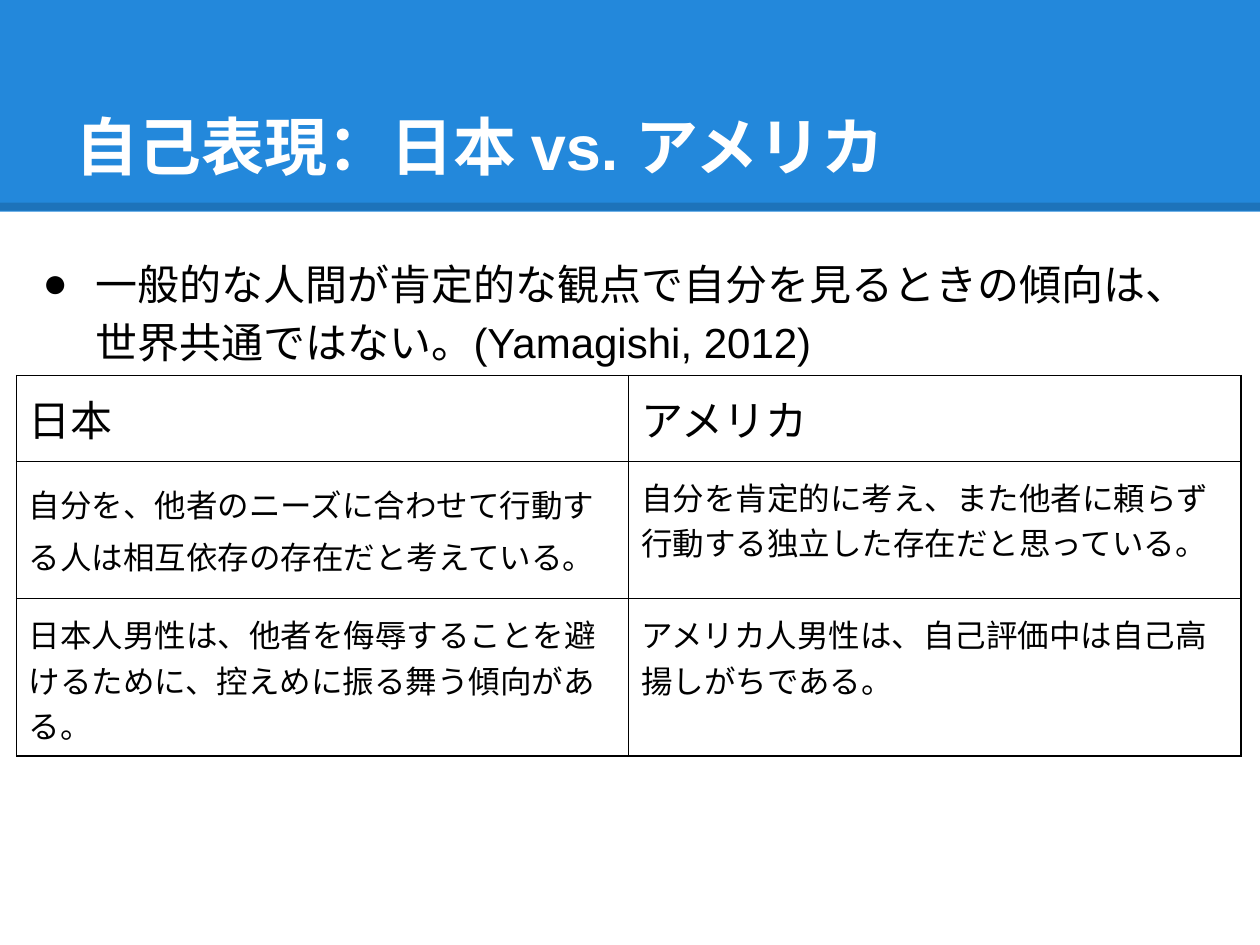
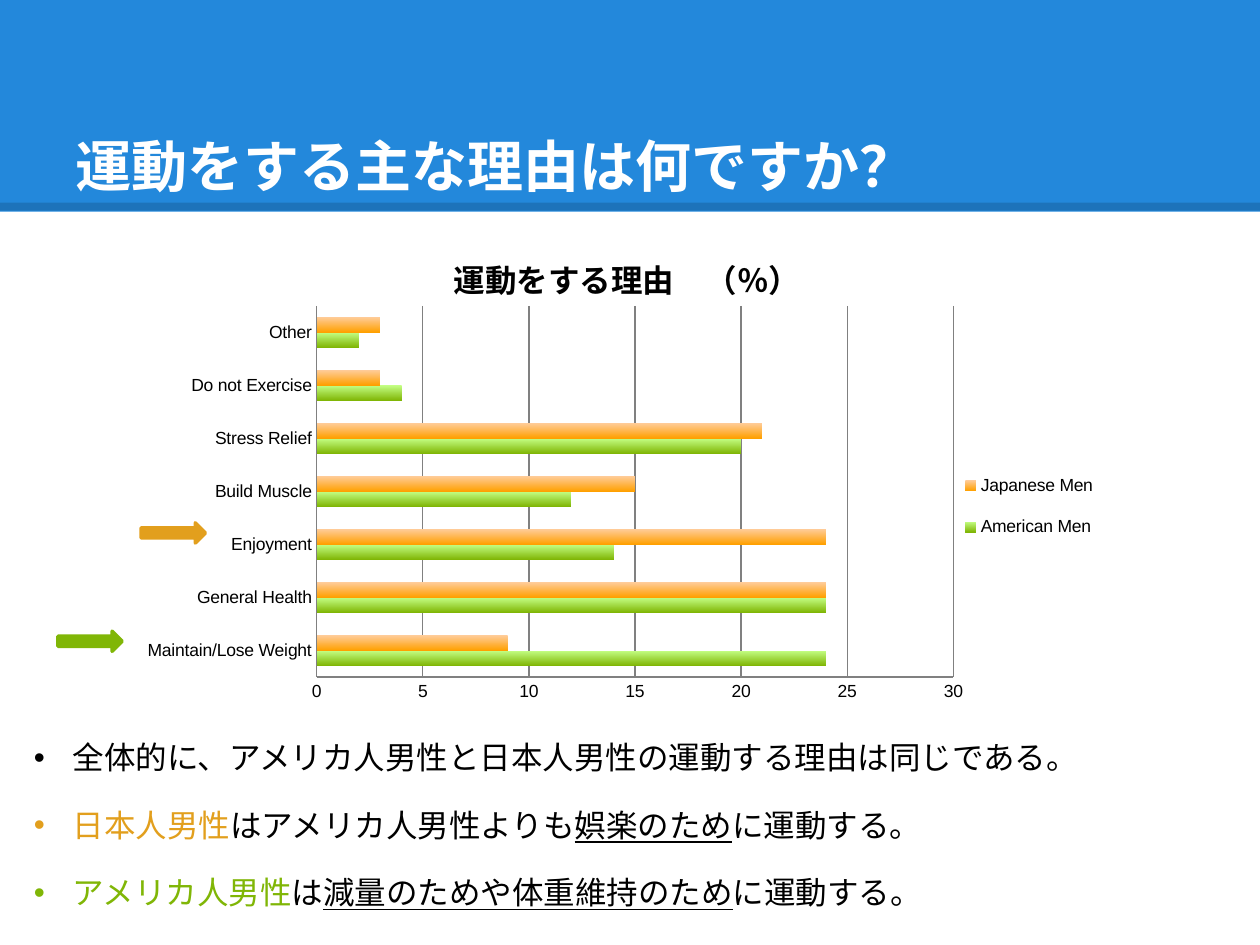
"""Two slides comparing how men in Japan and America see themselves and exercise."""
from dataclasses import dataclass

from lxml import etree
from pptx import Presentation
from pptx.chart.data import CategoryChartData
from pptx.dml.color import RGBColor
from pptx.enum.chart import XL_CHART_TYPE, XL_LEGEND_POSITION, XL_TICK_MARK
from pptx.enum.shapes import MSO_CONNECTOR, MSO_SHAPE
from pptx.enum.text import MSO_ANCHOR, MSO_AUTO_SIZE, PP_ALIGN
from pptx.oxml.ns import qn
from pptx.util import Inches, Pt

BAR = XL_CHART_TYPE.BAR_CLUSTERED
RIGHT = XL_LEGEND_POSITION.RIGHT
NO_TICK = XL_TICK_MARK.NONE
STRAIGHT = MSO_CONNECTOR.STRAIGHT
RECT, ARROW = MSO_SHAPE.RECTANGLE, MSO_SHAPE.RIGHT_ARROW
TOP, BOTTOM = MSO_ANCHOR.TOP, MSO_ANCHOR.BOTTOM
NO_FIT = MSO_AUTO_SIZE.NONE
LEFT = PP_ALIGN.LEFT

FACE = "Arial"
BLUE, WHITE, BLACK, GRAY = "2388DB", "FFFFFF", "000000", "808080"
JAPAN, USA = "E29F1D", "80B606"


@dataclass
class Phrase:
    """A stretch of text with its own colour or underline."""
    text: str
    tone: str = BLACK
    under: bool = False


@dataclass
class Point:
    """A bulleted line made of phrases."""
    words: list[Phrase]


@dataclass
class Group:
    """One chart series with the ends of its gradient."""
    name: str
    vals: tuple[int, ...]
    light: str
    dark: str


@dataclass
class Mark:
    """An arrow that points at a chart category."""
    left: float
    top: float
    tone: str


ROWS = [
    ("日本", "アメリカ"),
    ("自分を、他者のニーズに合わせて行動する人は相互依存の存在だと考えている。",
     "自分を肯定的に考え、また他者に頼らず行動する独立した存在だと思っている。"),
    ("日本人男性は、他者を侮辱することを避けるために、控えめに振る舞う傾向がある。",
     "アメリカ人男性は、自己評価中は自己高揚しがちである。"),
]
TALL = (0.68, 1.09, 1.25)
CATS = ["Maintain/Lose Weight", "General Health", "Enjoyment", "Build Muscle",
        "Stress Relief", "Do not Exercise", "Other"]
GROUPS = [
    Group("American Men", (24, 24, 14, 12, 20, 4, 2), "C4FF85", USA),
    Group("Japanese Men", (9, 24, 24, 15, 21, 3, 3), "FFCC99", "FFA000"),
]
MARKS = [Mark(1.12, 4.15, JAPAN), Mark(0.46, 5.01, USA)]
POINTS = [
    Point([Phrase("全体的に、アメリカ人男性と日本人男性の運動する理由は同じである。")]),
    Point([Phrase("日本人男性", JAPAN), Phrase("はアメリカ人男性よりも"),
           Phrase("娯楽のため", under=True), Phrase("に運動する。")]),
    Point([Phrase("アメリカ人男性", USA), Phrase("は"),
           Phrase("減量のためや体重維持のため", under=True),
           Phrase("に運動する。")]),
]


def color(tone: str) -> RGBColor:
    """Turn a hex string into a colour."""
    return RGBColor.from_string(tone)


def style(font, size: float, tone: str = BLACK, bold: bool = False) -> None:
    """Set face, size, colour and weight of a font."""
    font.name, font.size, font.bold = FACE, Pt(size), bold
    font.color.rgb = color(tone)


def bullet(para, sign: str, tone: str, indent: float, hang: float) -> None:
    """Give a paragraph a coloured bullet with a hanging indent."""
    props = para._p.get_or_add_pPr()
    props.set("marL", str(Inches(indent)))
    props.set("indent", str(-Inches(hang)))
    fill = etree.SubElement(props, qn("a:buClr"))
    etree.SubElement(fill, qn("a:srgbClr"), val=tone)
    etree.SubElement(props, qn("a:buFont"), typeface=FACE)
    etree.SubElement(props, qn("a:buChar"), char=sign)


def add_box(slide, left: float, top: float, width: float, height: float):
    """Add a wrapping text box and return its frame."""
    box = slide.shapes.add_textbox(*map(Inches, (left, top, width, height)))
    box.text_frame.word_wrap = True
    return box.text_frame


def add_form(slide, kind, spot: tuple, tone: str):
    """Add a flat filled shape without a line."""
    form = slide.shapes.add_shape(kind, *map(Inches, spot))
    form.shadow.inherit = False
    form.fill.solid()
    form.fill.fore_color.rgb = color(tone)
    form.line.fill.background()
    return form


def add_slide(deck, text: str, top: float, size: float):
    """Add a slide with the blue band, its dark edge and a title."""
    slide = deck.slides.add_slide(deck.slide_layouts[5])
    band = add_form(slide, RECT, (0, 0, 10, 1.68), BLUE)
    edge = slide.shapes.add_connector(
        STRAIGHT, *map(Inches, (0, 1.64, 10, 1.64)))
    edge.line.width = Pt(4.5)
    edge.line.color.rgb = color(BLACK)
    shade = next(edge._element.iter(qn("a:srgbClr")))
    etree.SubElement(shade, qn("a:alpha"), val="15000")
    etree.SubElement(edge._element.spPr, qn("a:effectLst"))
    for index, item in enumerate((band, edge), 2):
        slide.shapes._spTree.insert(index, item._element)

    title = slide.shapes.title
    title.left, title.top, title.width, title.height = map(
        Inches, (0.5, top, 9, 1.25))
    frame = title.text_frame
    frame.text = text
    frame.word_wrap, frame.auto_size = True, NO_FIT
    frame.vertical_anchor = BOTTOM
    frame.margin_left = frame.margin_right = Inches(0.1)
    frame.margin_top = frame.margin_bottom = Inches(0.1)
    para = frame.paragraphs[0]
    para.alignment = LEFT
    style(para.font, size, WHITE, True)
    return slide


def frame_cell(cell) -> None:
    """Draw thin black borders around a cell with no fill."""
    cell.fill.background()
    props = cell._tc.get_or_add_tcPr()
    for index, side in enumerate(("lnL", "lnR", "lnT", "lnB")):
        line = etree.Element(qn(f"a:{side}"), w=str(Pt(0.75)))
        fill = etree.SubElement(line, qn("a:solidFill"))
        etree.SubElement(fill, qn("a:srgbClr"), val=BLACK)
        props.insert(index, line)


def add_grid(slide) -> None:
    """Add the table that sets Japan beside America."""
    grid = slide.shapes.add_table(
        len(ROWS), 2, *map(Inches, (0.13, 2.98, 9.72, sum(TALL)))).table
    grid.first_row = grid.horz_banding = False
    for row, (texts, tall) in enumerate(zip(ROWS, TALL)):
        grid.rows[row].height = Inches(tall)
        for col, text in enumerate(texts):
            cell = grid.cell(row, col)
            cell.text = text
            cell.vertical_anchor = TOP
            cell.margin_left = cell.margin_right = Inches(0.1)
            cell.margin_top = cell.margin_bottom = Inches(0.1)
            style(cell.text_frame.paragraphs[0].font, 18 if row else 24)
            frame_cell(cell)
    loose = grid.cell(1, 0).text_frame.paragraphs[0]
    loose.line_spacing, loose.space_after = 1.15, Pt(10)


def place(node, index: int, **spot: float) -> None:
    """Fix a chart element at shares of the chart size."""
    old = node.find(qn("c:layout"))
    if old is not None:
        node.remove(old)
    layout = etree.Element(qn("c:layout"))
    node.insert(index, layout)
    manual = etree.SubElement(layout, qn("c:manualLayout"))
    if index == 0:
        etree.SubElement(manual, qn("c:layoutTarget"), val="inner")
    for key in ("x", "y"):
        etree.SubElement(manual, qn(f"c:{key}Mode"), val="edge")
    for key, share in spot.items():
        etree.SubElement(manual, qn(f"c:{key}"), val=str(share))


def add_bars(slide) -> None:
    """Add the bar chart of reasons to exercise."""
    data = CategoryChartData()
    data.categories = CATS
    for group in GROUPS:
        data.add_series(group.name, group.vals)
    chart = slide.shapes.add_chart(
        BAR, *map(Inches, (0.99, 1.72, 8.02, 3.93)), data).chart
    style(chart.font, 10)

    head = chart.chart_title
    head.text_frame.text = "運動をする理由　（％）"
    style(head.text_frame.paragraphs[0].font, 18, bold=True)
    place(head._element, 1, x=0.32, y=0.06)
    chart.has_legend = True
    chart.legend.position = RIGHT
    chart.legend.include_in_layout = False
    place(chart.legend._element, 1, x=0.82, y=0.48, w=0.15, h=0.21)
    area = next(chart._chartSpace.iter(qn("c:plotArea")))
    place(area, 0, x=0.19, y=0.18, w=0.63, h=0.75)

    for axis in (chart.category_axis, chart.value_axis):
        axis.major_tick_mark = axis.minor_tick_mark = NO_TICK
        axis.format.line.color.rgb = color(GRAY)
    scale = chart.value_axis
    scale.minimum_scale, scale.maximum_scale, scale.major_unit = 0, 30, 5
    scale.major_gridlines.format.line.color.rgb = color(GRAY)

    plot = chart.plots[0]
    plot.gap_width, plot.overlap = 150, 0
    plot.vary_by_categories = False
    for series, group in zip(plot.series, GROUPS):
        fill = series.format.fill
        fill.gradient()
        fill.gradient_angle = 270
        for stop, tone in zip(fill.gradient_stops, (group.light, group.dark)):
            stop.color.rgb = color(tone)


def add_points(slide) -> None:
    """Add the bulleted findings below the chart."""
    frame = add_box(slide, 0.17, 5.81, 9.33, 1.62)
    for index, point in enumerate(POINTS):
        para = frame.add_paragraph() if index else frame.paragraphs[0]
        bullet(para, "•", point.words[0].tone, 0.31, 0.31)
        if index:
            para.space_before = Pt(17)
        para.font.name, para.font.size = FACE, Pt(18)
        for phrase in point.words:
            run = para.add_run()
            run.text = phrase.text
            run.font.color.rgb = color(phrase.tone)
            if phrase.under:
                run.font.underline = True


def build_self(deck) -> None:
    """Build the slide on self-expression."""
    slide = add_slide(deck, "自己表現：日本 vs. アメリカ", 0.3, 36)
    frame = add_box(slide, 0.16, 1.89, 9.65, 5.47)
    frame.margin_top = frame.margin_bottom = Inches(0.1)
    para = frame.paragraphs[0]
    para.text = ("一般的な人間が肯定的な観点で自分を見るときの傾向は、"
                 "世界共通ではない。(Yamagishi, 2012)")
    bullet(para, "●", BLACK, 0.5, 0.42)
    para.line_spacing = 1.15
    style(para.font, 24)
    add_grid(slide)


def build_why(deck) -> None:
    """Build the slide on reasons to exercise."""
    slide = add_slide(deck, "運動をする主な理由は何ですか？", 0.43, 32)
    add_bars(slide)
    add_points(slide)
    for mark in MARKS:
        arrow = add_form(slide, ARROW, (mark.left, mark.top, 0.51, 0.16),
                         mark.tone)
        arrow.line.color.rgb = color(mark.tone)
        arrow.line.width = Pt(2)


def main() -> None:
    """Build both slides and save them."""
    deck = Presentation()
    deck.slide_width, deck.slide_height = Inches(10), Inches(7.5)
    build_self(deck)
    build_why(deck)
    deck.save("out.pptx")


if __name__ == "__main__":
    main()
